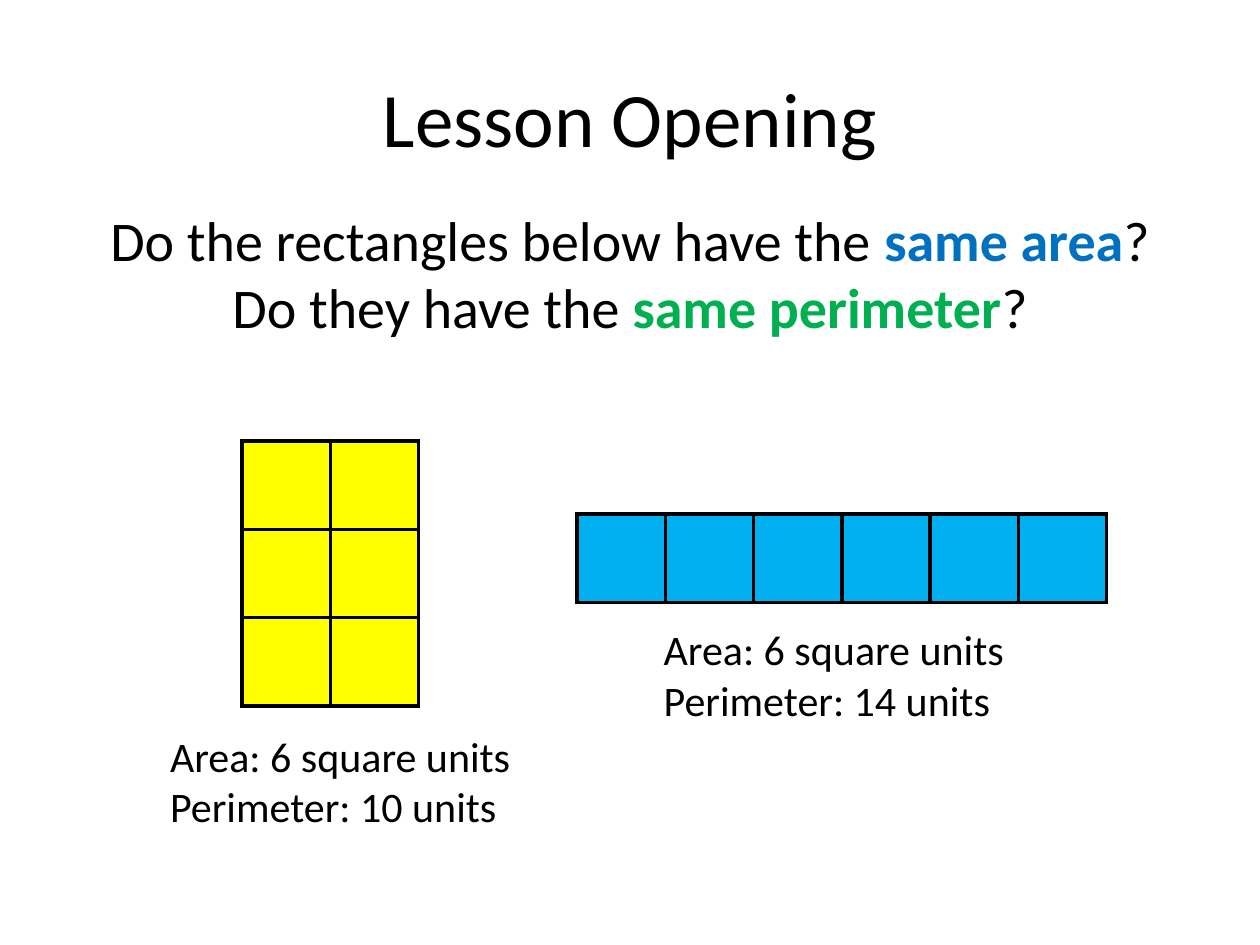
import pptx
import pptx.util
import pptx.dml.color
import pptx.enum.text
import pptx.oxml.ns
from lxml import etree

Cm = pptx.util.Cm
Pt = pptx.util.Pt
RGBColor = pptx.dml.color.RGBColor
ALIGN = pptx.enum.text.PP_ALIGN
ANCHOR = pptx.enum.text.MSO_ANCHOR
qn = pptx.oxml.ns.qn

BLACK = RGBColor(0x00, 0x00, 0x00)
BLUE = RGBColor(0x00, 0x70, 0xC0)
GREEN = RGBColor(0x00, 0xB0, 0x50)
YELLOW = RGBColor(0xFF, 0xFF, 0x00)
SKY = RGBColor(0x00, 0xB0, 0xF0)


class Deck:
    font = "Calibri"
    unit = 1.78
    edge = Pt(2.25)

    def __init__(self, show):
        self.slide = show.slides.add_slide(show.slide_layouts[1])

    def place(self, shape, left, top, width, height):
        shape.left, shape.top = Cm(left), Cm(top)
        shape.width, shape.height = Cm(width), Cm(height)

    def add_text(self, para, text, size, color=BLACK, bold=False):
        run = para.add_run()
        run.text = text
        run.font.name = self.font
        run.font.size = Pt(size)
        run.font.bold = bold
        run.font.color.rgb = color

    def title(self, text, *box):
        shape = self.slide.shapes.title
        self.place(shape, *box)
        shape.text_frame.vertical_anchor = ANCHOR.MIDDLE
        para = shape.text_frame.paragraphs[0]
        para.alignment = ALIGN.CENTER
        self.add_text(para, text, 44)

    def body(self, parts, *box):
        shape = self.slide.placeholders[1]
        self.place(shape, *box)
        para = shape.text_frame.paragraphs[0]
        para.alignment = ALIGN.CENTER
        props = para._p.get_or_add_pPr()
        props.set("marL", "0")
        props.set("indent", "0")
        etree.SubElement(props, qn("a:buNone"))
        for text, color, bold in parts:
            self.add_text(para, text, 32, color, bold)

    def border(self, cell):
        props = cell._tc.get_or_add_tcPr()
        for spot, side in enumerate(("lnL", "lnR", "lnT", "lnB")):
            line = etree.Element(qn("a:" + side), w=str(int(self.edge)))
            fill = etree.SubElement(line, qn("a:solidFill"))
            etree.SubElement(fill, qn("a:srgbClr"), val=str(BLACK))
            props.insert(spot, line)

    def grid(self, rows, cols, color, left, top):
        frame = self.slide.shapes.add_table(
            rows, cols, Cm(left), Cm(top),
            Cm(cols * self.unit), Cm(rows * self.unit))
        table = frame.table
        for row in table.rows:
            row.height = Cm(self.unit)
        for col in table.columns:
            col.width = Cm(self.unit)
        for cell in table.iter_cells():
            cell.fill.solid()
            cell.fill.fore_color.rgb = color
            self.border(cell)

    def label(self, lines, left, top):
        box = self.slide.shapes.add_textbox(
            Cm(left), Cm(top), Cm(8.05), Cm(2.31))
        frame = box.text_frame
        frame.word_wrap = True
        for spot, text in enumerate(lines):
            para = frame.add_paragraph() if spot else frame.paragraphs[0]
            self.add_text(para, text, 24)


def main():
    show = pptx.Presentation()
    show.slide_width, show.slide_height = Cm(25.4), Cm(19.05)
    deck = Deck(show)
    deck.title("Lesson Opening", 1.27, 0.76, 22.86, 3.18)
    deck.body([
        ("Do the rectangles below have the ", BLACK, False),
        ("same area", BLUE, True),
        ("? Do they have the ", BLACK, False),
        ("same perimeter", GREEN, True),
        ("?", BLACK, False),
    ], 1.27, 4.01, 22.86, 13)
    deck.grid(3, 2, YELLOW, 4.88, 8.89)
    deck.grid(1, 6, SKY, 11.63, 10.36)
    area = "Area: 6 square units"
    deck.label([area, "Perimeter: 10 units"], 3.18, 14.6)
    deck.label([area, "Perimeter: 14 units"], 13.13, 12.45)
    show.save("out.pptx")


if __name__ == "__main__":
    main()
